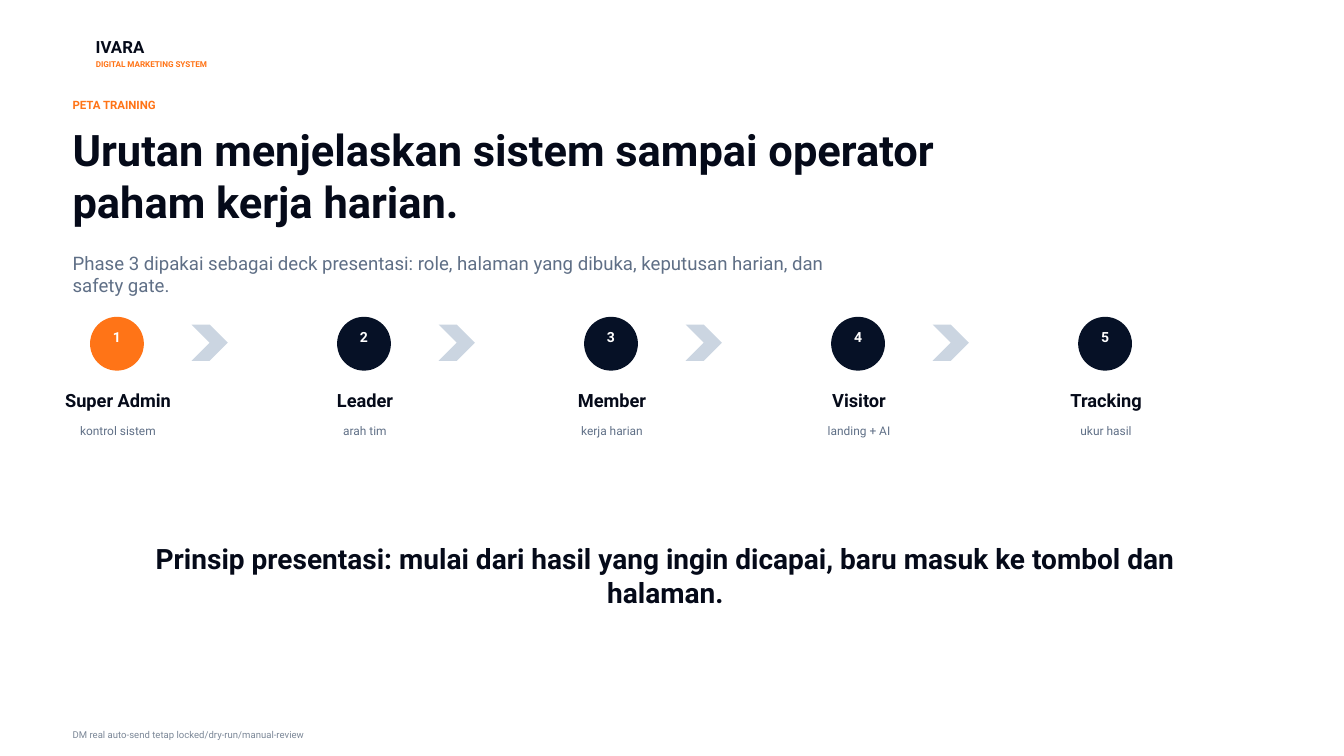
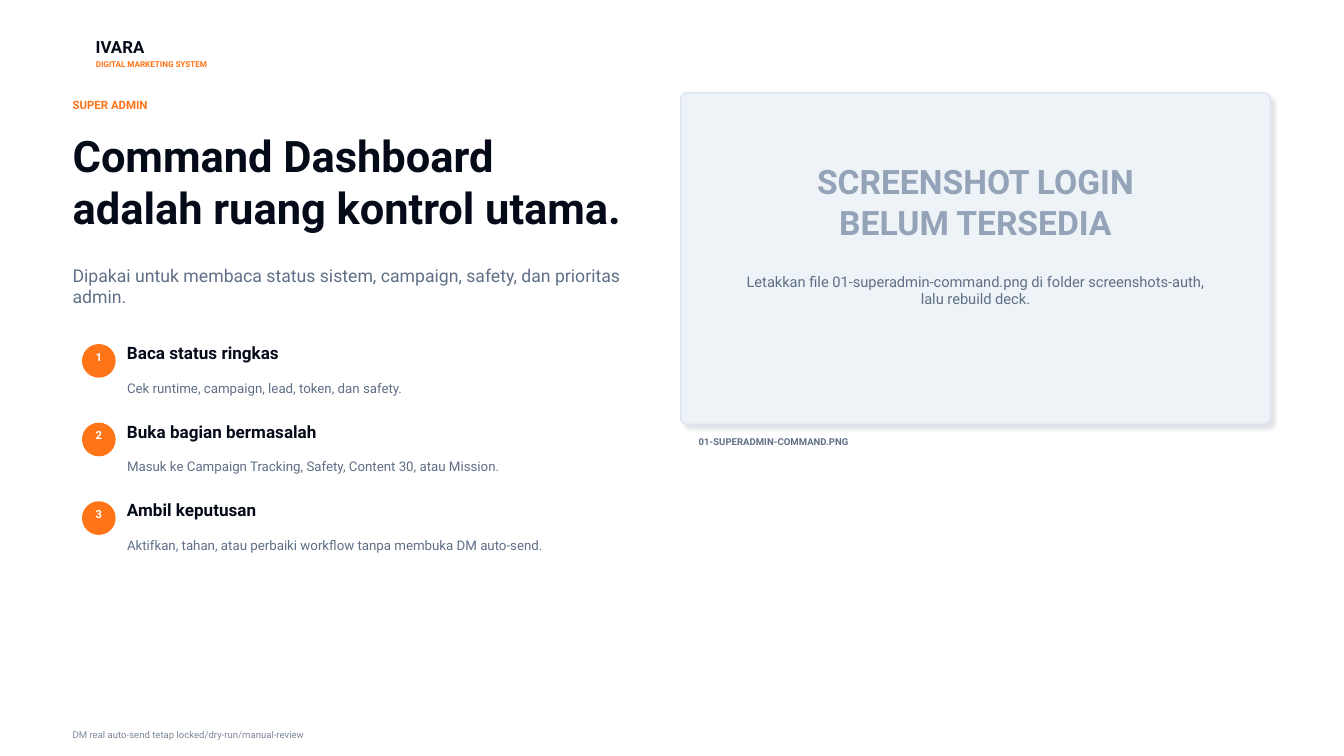
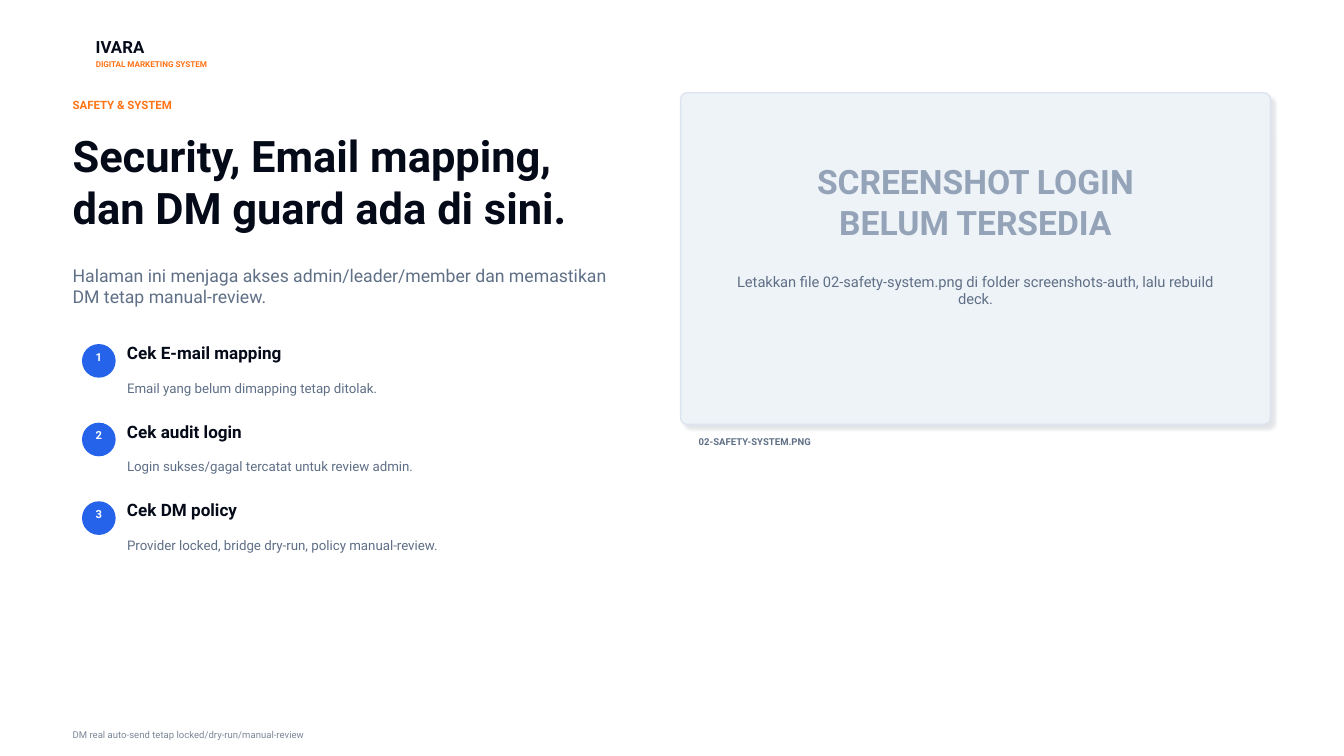
"""Build three training slides: a role sequence and two screen walkthroughs."""
from dataclasses import dataclass
from typing import NamedTuple

from lxml import etree
from pptx import Presentation
from pptx import util as u
from pptx.dml import color
from pptx.enum import shapes, text
from pptx.oxml import ns
from pptx.shapes import autoshape
from pptx.slide import Slide
from pptx.text import text as txt


class Style(NamedTuple):
    size: float
    color: str
    bold: bool = False


class Box(NamedTuple):
    left: float
    top: float
    width: float
    height: float


@dataclass(frozen=True)
class Theme:
    font: str = "Roboto"
    orange: str = "FF7417"
    blue: str = "2563EB"
    navy: str = "061126"
    paper: str = "FFFFFF"
    chevron: str = "CBD5E1"
    panel: str = "EEF3F8"
    panel_edge: str = "DCE4EF"
    shadow: str = "23314A"
    sender: Style = Style(12, "050A19", True)
    tagline: Style = Style(5.8, "FF7417", True)
    eyebrow: Style = Style(8.2, "FF7417", True)
    title: Style = Style(31, "050A19", True)
    lead: Style = Style(13.3, "5F6F86")
    screen_lead: Style = Style(12.6, "5F6F86")
    role: Style = Style(13, "050A19", True)
    duty: Style = Style(8.5, "5F6F86")
    role_number: Style = Style(10, "FFFFFF", True)
    step_number: Style = Style(8, "FFFFFF", True)
    step: Style = Style(12.2, "050A19", True)
    detail: Style = Style(9.5, "5F6F86")
    principle: Style = Style(20, "050A19", True)
    notice: Style = Style(24, "94A3B8", True)
    hint: Style = Style(10.5, "5F6F86")
    caption: Style = Style(6.8, "5F6F86", True)
    footer: Style = Style(6.8, "7B8797")


@dataclass(frozen=True)
class Heading:
    eyebrow: str
    title: str
    lead: str


@dataclass(frozen=True)
class Step:
    name: str
    detail: str


@dataclass(frozen=True)
class Screen:
    heading: Heading
    accent: str
    file: str
    steps: tuple[Step, ...]


THEME = Theme()
LEFT = 0.72
CENTER = text.PP_ALIGN.CENTER

ROLE_HEADING = Heading(
    "PETA TRAINING",
    "Urutan menjelaskan sistem sampai operator paham kerja harian.",
    "Phase 3 dipakai sebagai deck presentasi: role, halaman yang dibuka, "
    "keputusan harian, dan safety gate.",
)
ROLES = (
    Step("Super Admin", "kontrol sistem"),
    Step("Leader", "arah tim"),
    Step("Member", "kerja harian"),
    Step("Visitor", "landing + AI"),
    Step("Tracking", "ukur hasil"),
)
PRINCIPLE = ("Prinsip presentasi: mulai dari hasil yang ingin dicapai, "
             "baru masuk ke tombol dan halaman.")
SCREENS = (
    Screen(
        Heading(
            "SUPER ADMIN",
            "Command Dashboard adalah ruang kontrol utama.",
            "Dipakai untuk membaca status sistem, campaign, safety, dan prioritas admin.",
        ),
        THEME.orange,
        "01-superadmin-command.png",
        (
            Step("Baca status ringkas", "Cek runtime, campaign, lead, token, dan safety."),
            Step("Buka bagian bermasalah",
                 "Masuk ke Campaign Tracking, Safety, Content 30, atau Mission."),
            Step("Ambil keputusan",
                 "Aktifkan, tahan, atau perbaiki workflow tanpa membuka DM auto-send."),
        ),
    ),
    Screen(
        Heading(
            "SAFETY & SYSTEM",
            "Security, Email mapping, dan DM guard ada di sini.",
            "Halaman ini menjaga akses admin/leader/member dan memastikan "
            "DM tetap manual-review.",
        ),
        THEME.blue,
        "02-safety-system.png",
        (
            Step("Cek E-mail mapping", "Email yang belum dimapping tetap ditolak."),
            Step("Cek audit login", "Login sukses/gagal tercatat untuk review admin."),
            Step("Cek DM policy", "Provider locked, bridge dry-run, policy manual-review."),
        ),
    ),
)


def rgb(value: str) -> color.RGBColor:
    return color.RGBColor.from_string(value)


def inches(box: Box) -> list[u.Length]:
    return [u.Inches(length) for length in box]


def write(frame: txt.TextFrame, words: str, style: Style,
          align: text.PP_ALIGN = text.PP_ALIGN.LEFT, bottom: float = 0) -> None:
    frame.text = words
    frame.word_wrap = True
    frame.vertical_anchor = text.MSO_ANCHOR.MIDDLE
    frame.margin_left = frame.margin_right = frame.margin_top = 0
    frame.margin_bottom = u.Inches(bottom)
    for paragraph in frame.paragraphs:
        paragraph.alignment = align
        for run in paragraph.runs:
            run.font.name = THEME.font
            run.font.size = u.Pt(style.size)
            run.font.bold = style.bold
            run.font.color.rgb = rgb(style.color)


def add_text(slide: Slide, box: Box, words: str, style: Style,
             align: text.PP_ALIGN = text.PP_ALIGN.LEFT) -> None:
    write(slide.shapes.add_textbox(*inches(box)).text_frame, words, style, align)


def add_shape(slide: Slide, kind: shapes.MSO_SHAPE, box: Box, fill: str,
              line: str | None = None) -> autoshape.Shape:
    shape = slide.shapes.add_shape(kind, *inches(box))
    shape.shadow.inherit = False
    shape.fill.solid()
    shape.fill.fore_color.rgb = rgb(fill)
    if line:
        shape.line.color.rgb = rgb(line)
        shape.line.width = u.Pt(1)
    else:
        shape.line.fill.background()
    return shape


def add_badge(slide: Slide, left: float, top: float, size: float, number: int,
              fill: str, style: Style, lift: float) -> None:
    badge = add_shape(slide, shapes.MSO_SHAPE.OVAL, Box(left, top, size, size), fill, fill)
    write(badge.text_frame, str(number), style, CENTER, lift)


def cast_shadow(shape: autoshape.Shape) -> None:
    effects = shape.element.spPr.find(ns.qn("a:effectLst"))
    outer = etree.SubElement(effects, ns.qn("a:outerShdw"), blurRad=str(u.Pt(2)),
                             dist=str(u.Pt(4)), dir=str(45 * 60000),
                             algn="ctr", rotWithShape="0")
    tint = etree.SubElement(outer, ns.qn("a:srgbClr"), val=THEME.shadow)
    etree.SubElement(tint, ns.qn("a:alpha"), val="12000")


def add_frame(slide: Slide) -> None:
    slide.background.fill.solid()
    slide.background.fill.fore_color.rgb = rgb(THEME.paper)
    add_text(slide, Box(0.95, 0.36, 1.5, 0.2), "IVARA", THEME.sender)
    add_text(slide, Box(0.95, 0.58, 2.35, 0.12), "DIGITAL MARKETING SYSTEM", THEME.tagline)
    add_text(slide, Box(LEFT, 7.22, 7.2, 0.14),
             "DM real auto-send tetap locked/dry-run/manual-review", THEME.footer)


def add_heading(slide: Slide, heading: Heading, eyebrow_width: float, title: Box,
                lead_width: float, lead_style: Style) -> None:
    add_text(slide, Box(LEFT, 0.95, eyebrow_width, 0.18), heading.eyebrow, THEME.eyebrow)
    add_text(slide, title, heading.title, THEME.title)
    lead_top = title.top + title.height + 0.22
    add_text(slide, Box(LEFT, lead_top, lead_width, 0.62), heading.lead, lead_style)


def add_roles(slide: Slide) -> None:
    size, pitch = 0.52, 2.45
    for index, role in enumerate(ROLES):
        left = 0.9 + index * pitch
        middle = left + size / 2 + 0.01
        fill = THEME.navy if index else THEME.orange
        add_badge(slide, left, 3.15, size, index + 1, fill, THEME.role_number, 0.14)
        add_text(slide, Box(middle - 0.65, 3.88, 1.3, 0.18), role.name, THEME.role, CENTER)
        add_text(slide, Box(middle - 0.75, 4.18, 1.5, 0.18), role.detail, THEME.duty, CENTER)
        if index < len(ROLES) - 1:
            add_shape(slide, shapes.MSO_SHAPE.CHEVRON, Box(left + 1, 3.22, 0.36, 0.36),
                      THEME.chevron)


def add_panel(slide: Slide, file: str) -> None:
    panel = add_shape(slide, shapes.MSO_SHAPE.ROUNDED_RECTANGLE, Box(6.75, 0.92, 5.85, 3.29),
                      THEME.panel, THEME.panel_edge)
    panel.adjustments[0] = 0.02
    cast_shadow(panel)
    add_text(slide, Box(7.11, 1.68, 5.13, 0.64), "SCREENSHOT LOGIN\nBELUM TERSEDIA",
             THEME.notice, CENTER)
    add_text(slide, Box(7.3, 2.6, 4.75, 0.56),
             f"Letakkan file {file} di folder screenshots-auth, lalu rebuild deck.",
             THEME.hint, CENTER)
    add_text(slide, Box(6.93, 4.31, 5.49, 0.14), file.upper(), THEME.caption)


def add_steps(slide: Slide, steps: tuple[Step, ...], accent: str) -> None:
    for index, step in enumerate(steps):
        top = 3.42 + index * 0.78
        add_badge(slide, 0.82, top, 0.32, index + 1, accent, THEME.step_number, 0.08)
        add_text(slide, Box(1.26, top - 0.01, 4.8, 0.18), step.name, THEME.step)
        add_text(slide, Box(1.26, top + 0.26, 4.95, 0.34), step.detail, THEME.detail)


def add_role_slide(slide: Slide) -> None:
    add_frame(slide)
    add_heading(slide, ROLE_HEADING, 8.4, Box(LEFT, 1.29, 8.6, 0.9), 7.6, THEME.lead)
    add_roles(slide)
    add_text(slide, Box(1.1, 5.55, 11, 0.32), PRINCIPLE, THEME.principle, CENTER)


def add_screen_slide(slide: Slide, screen: Screen) -> None:
    width = 5.45
    add_frame(slide)
    add_heading(slide, screen.heading, width, Box(LEFT, 1.29, width, 1.02), width,
                THEME.screen_lead)
    add_panel(slide, screen.file)
    add_steps(slide, screen.steps, screen.accent)


def main() -> None:
    deck = Presentation()
    deck.slide_width, deck.slide_height = u.Inches(13.33), u.Inches(7.5)
    blank = deck.slide_layouts[6]
    add_role_slide(deck.slides.add_slide(blank))
    for screen in SCREENS:
        add_screen_slide(deck.slides.add_slide(blank), screen)
    deck.save("out.pptx")


if __name__ == "__main__":
    main()
